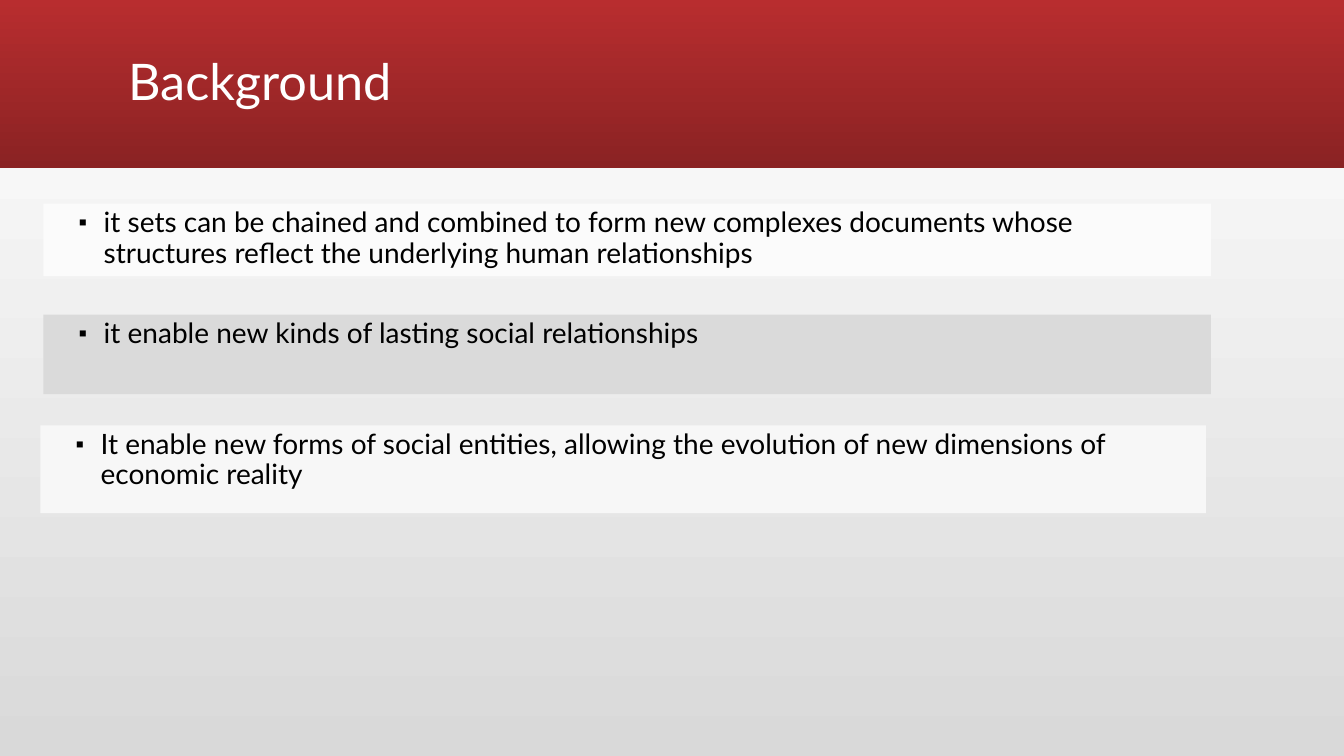
from dataclasses import dataclass

from lxml.etree import SubElement
from pptx import Presentation
from pptx.dml.color import RGBColor
from pptx.dml.fill import FillFormat
from pptx.enum.shapes import MSO_SHAPE as Kind
from pptx.enum.text import MSO_ANCHOR as Anchor, MSO_AUTO_SIZE as Fit, PP_ALIGN as Align
from pptx.oxml.ns import qn
from pptx.shapes.autoshape import Shape
from pptx.slide import Slide
from pptx.text.text import _Paragraph as Para
from pptx.util import Inches, Pt

FONT = "Lato"


@dataclass
class Panel:
    left: float
    top: float
    width: float
    height: float
    fill: str
    text: str


PANELS = [
    Panel(0.43, 2.02, 11.58, 0.72, "FBFBFB",
          "it sets can be chained and combined to form new complexes documents "
          "whose structures reflect the underlying human relationships"),
    Panel(0.43, 3.12, 11.58, 0.79, "DADADA",
          "it enable new kinds of lasting social relationships"),
    Panel(0.4, 4.22, 11.56, 0.87, "F7F7F7",
          "It enable new forms of social entities, allowing the evolution of "
          "new dimensions of economic reality"),
]


def color(code: str) -> RGBColor:
    return RGBColor.from_string(code)


def blend(fill: FillFormat, first: str, last: str, angle: float) -> None:
    fill.gradient()
    fill.gradient_angle = angle
    for stop, code, place in zip(fill.gradient_stops, (first, last), (0, 1)):
        stop.color.rgb = color(code)
        stop.position = place


def add_rect(slide: Slide, left: float, top: float, width: float, height: float) -> Shape:
    rect = slide.shapes.add_shape(
        Kind.RECTANGLE, Inches(left), Inches(top), Inches(width), Inches(height))
    rect.shadow.inherit = False
    rect.line.fill.background()
    return rect


def write(shape: Shape, text: str, *, size: float, ink: str,
          anchor: Anchor = Anchor.TOP, before: float = 0) -> Para:
    frame = shape.text_frame
    frame.word_wrap = True
    frame.auto_size = Fit.NONE
    frame.vertical_anchor = anchor
    frame.margin_left = frame.margin_right = Inches(0.1)
    frame.margin_top = frame.margin_bottom = Inches(0.05)
    para = frame.paragraphs[0]
    para.alignment = Align.LEFT
    para.line_spacing = 0.9
    para.space_before = Pt(before)
    run = para.add_run()
    run.text = text
    run.font.name = FONT
    run.font.size = Pt(size)
    run.font.color.rgb = color(ink)
    return para


def add_bullet(para: Para) -> None:
    para.level = 1
    props = para._p.get_or_add_pPr()
    props.set("marL", str(Inches(0.5)))
    props.set("indent", str(Inches(-0.25)))
    SubElement(props, qn("a:buSzPct"), val="80000")
    SubElement(props, qn("a:buFont"), typeface=FONT)
    SubElement(props, qn("a:buChar"), char="▪")


def add_panel(slide: Slide, panel: Panel) -> None:
    rect = add_rect(slide, panel.left, panel.top, panel.width, panel.height)
    rect.fill.solid()
    rect.fill.fore_color.rgb = color(panel.fill)
    add_bullet(write(rect, panel.text, size=20, ink="000000", before=6))


def main() -> None:
    deck = Presentation()
    deck.slide_width, deck.slide_height = Inches(13.33), Inches(7.5)
    slide = deck.slides.add_slide(deck.slide_layouts[5])
    blend(slide.background.fill, "D9D9D9", "FFFFFF", 90)

    # Title on its red band
    title = slide.shapes.title
    title.left, title.top = Inches(1.17), Inches(0.11)
    title.width, title.height = Inches(11), Inches(1.45)
    write(title, "Background", size=36, ink="FFFFFF", anchor=Anchor.MIDDLE)
    band = add_rect(slide, 0, 0, 13.33, 1.67)
    blend(band.fill, "B82D2F", "8A2223", 270)
    title.element.addprevious(band.element)

    # Bulleted panels
    for panel in PANELS:
        add_panel(slide, panel)

    deck.save("out.pptx")


if __name__ == "__main__":
    main()
